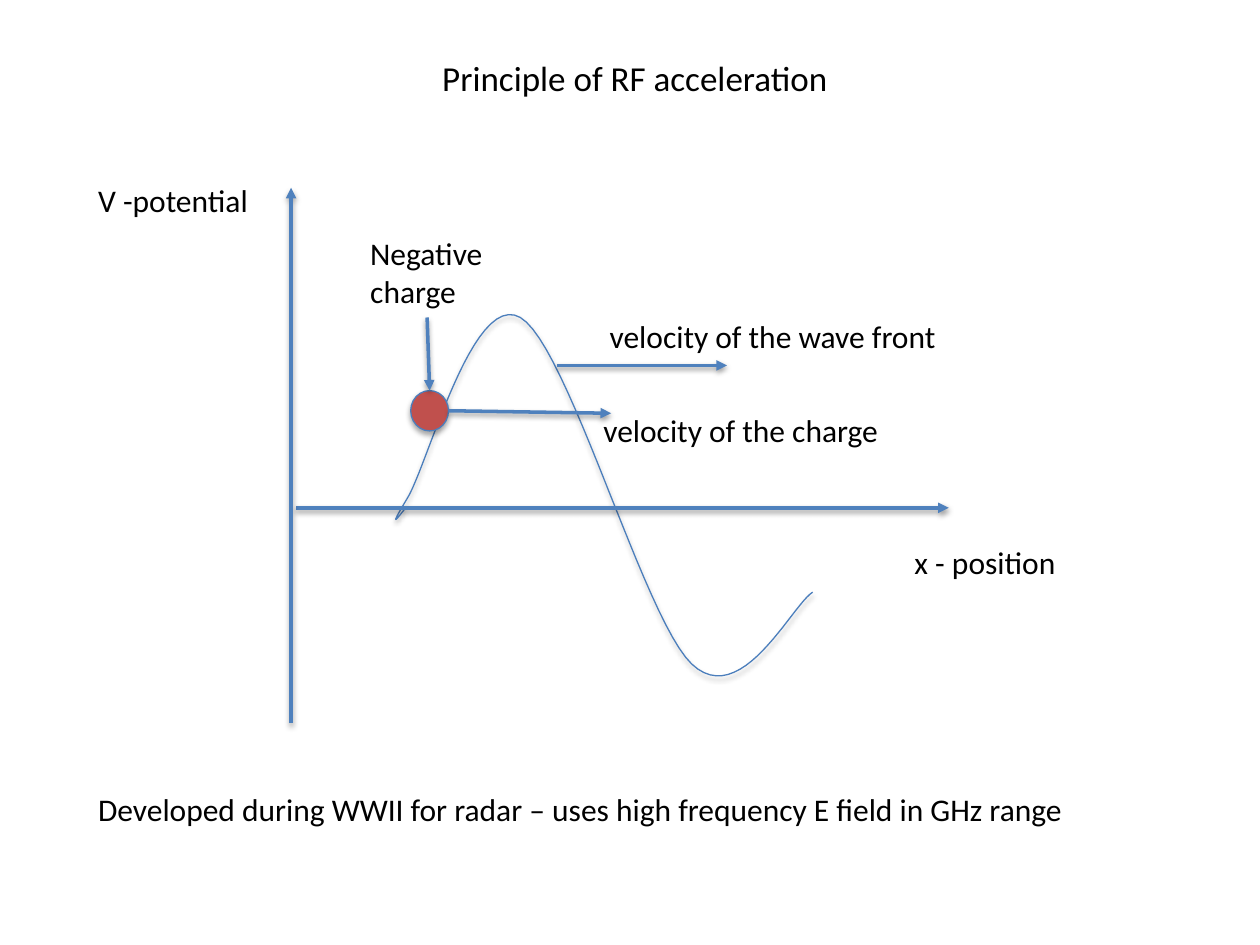
from lxml import etree
from pptx import Presentation
from pptx.dml.color import RGBColor
from pptx.enum import shapes, text
from pptx.oxml import parse_xml
from pptx.oxml.ns import nsdecls, qn
from pptx.util import Inches, Pt


def color(value):
    return RGBColor.from_string(value)


def outline(sp, value, width, alpha, dist):
    sp.line.color.rgb = color(value)
    sp.line.width = Pt(width)
    sp._element.spPr.append(parse_xml(
        f'<a:effectLst {nsdecls("a")}><a:outerShdw blurRad="{Pt(3.1)}" dist="{Pt(dist)}" '
        f'dir="5400000" rotWithShape="0"><a:srgbClr val="000000"><a:alpha val="{alpha}000"/>'
        '</a:srgbClr></a:outerShdw></a:effectLst>'))


prs = Presentation()
prs.slide_width, prs.slide_height = Inches(10), Inches(7.5)
s = prs.slides.add_slide(prs.slide_layouts[5])

title = s.shapes.title
title.left, title.top, title.width, title.height = [Inches(v) for v in (3.41, 0.4, 3.3, 0.44)]
tf = title.text_frame
tf.text = "Principle of RF acceleration"
tf.word_wrap = False
tf.vertical_anchor = text.MSO_ANCHOR.TOP
p = tf.paragraphs[0]
p.alignment = text.PP_ALIGN.LEFT
p.font.size, p.font.name, p.font.color.rgb = Pt(20), "Calibri", color("000000")

start = (3.22, 4.03)
curves = [
    ((3.15, 4.12), (3.08, 4.21), (3.23, 3.96)),
    ((3.39, 3.71), (3.75, 2.3), (4.13, 2.52)),
    ((4.51, 2.74), (5.11, 4.91), (5.49, 5.27)),
    ((5.88, 5.64), (6.28, 4.81), (6.45, 4.7)),
]
steps = 24
points = []
p0 = start
for p1, p2, p3 in curves:
    for i in range(1, steps + 1):
        t = i / steps
        points.append([
            Inches((1 - t) ** 3 * a + 3 * (1 - t) ** 2 * t * b + 3 * (1 - t) * t ** 2 * c + t ** 3 * d)
            for a, b, c, d in zip(p0, p1, p2, p3)])
    p0 = p3
fb = s.shapes.build_freeform(Inches(start[0]), Inches(start[1]))
fb.add_line_segments(points, close=False)
wave = fb.convert_to_shape()
wave.fill.background()
outline(wave, "4B7EBC", 0.75, 35, 1.8)

charge = s.shapes.add_shape(shapes.MSO_SHAPE.OVAL, Inches(3.26), Inches(3.1), Inches(0.3), Inches(0.32))
charge.fill.solid()
charge.fill.fore_color.rgb = color("C0504D")
outline(charge, "4B7EBC", 0.75, 35, 1.8)

arrows = [
    (2.35, 4.03, 7.53, 4.03),
    (2.31, 5.74, 2.31, 1.49),
    (3.39, 2.52, 3.41, 3.1),
    (4.42, 2.9, 5.77, 2.9),
    (3.56, 3.26, 4.85, 3.28),
]
for ends in arrows:
    cn = s.shapes.add_connector(shapes.MSO_CONNECTOR.STRAIGHT, *[Inches(v) for v in ends])
    outline(cn, "4F81BD", 2, 38, 1.6)
    etree.SubElement(cn.line._get_or_add_ln(), qn("a:tailEnd"), type="triangle")

labels = [
    (0.68, 1.39, 1.41, 0.4, "V -potential"),
    (7.16, 4.26, 1.33, 0.4, "x - position"),
    (2.84, 1.81, 1.1, 0.71, "Negative\ncharge"),
    (4.74, 2.47, 2.82, 0.4, "velocity of the wave front"),
    (4.69, 3.21, 2.41, 0.4, "velocity of the charge"),
    (0.68, 6.22, 7.96, 0.4, "Developed during WWII for radar – uses high frequency E field in GHz range"),
]
for *box, words in labels:
    tf = s.shapes.add_textbox(*[Inches(v) for v in box]).text_frame
    tf.text = words
    tf.word_wrap = False
    tf.auto_size = text.MSO_AUTO_SIZE.SHAPE_TO_FIT_TEXT
    for p in tf.paragraphs:
        p.font.size, p.font.name, p.font.color.rgb = Pt(18), "Calibri", color("000000")

prs.save("out.pptx")
